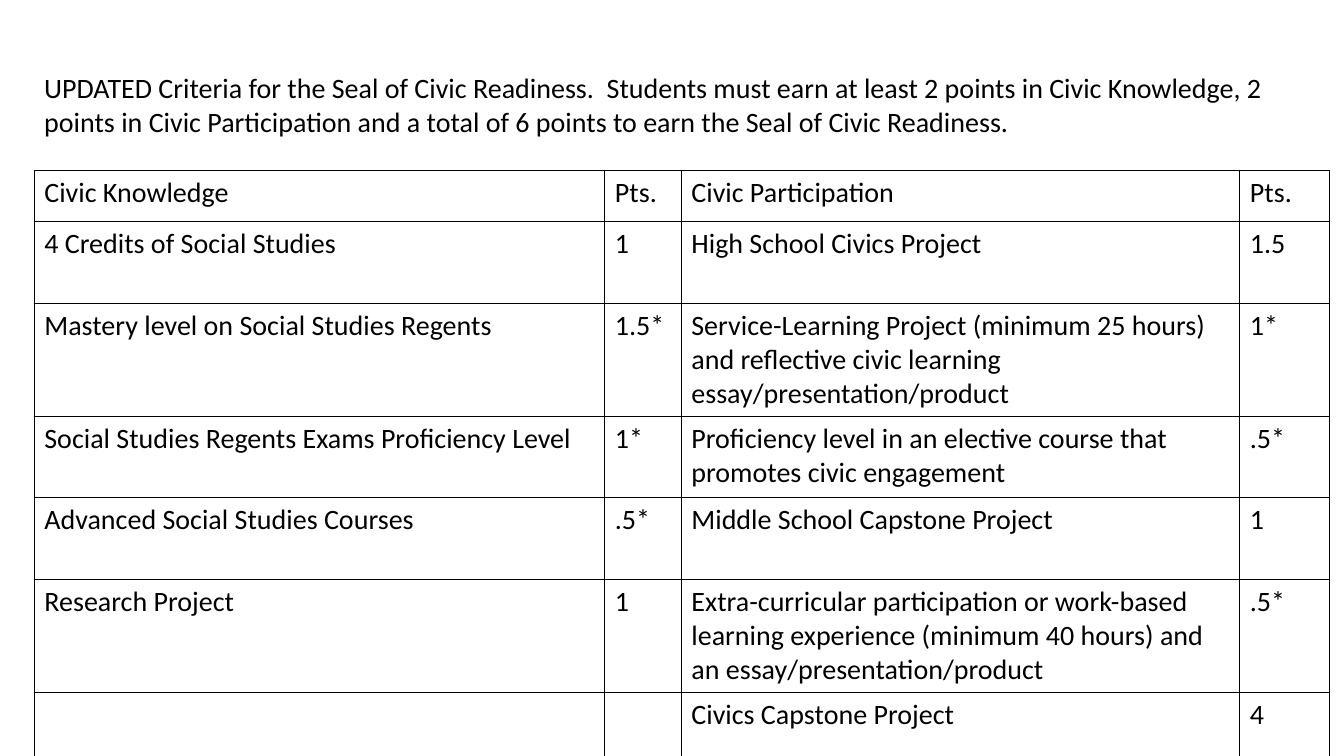
import pptx
import pptx.util
import pptx.dml.color
import pptx.enum.text
import pptx.oxml
import pptx.oxml.ns

Pt = pptx.util.Pt
INK = "000000"
FONT = {"name": "Calibri", "size": Pt(20), "bold": False}
INSETS = {"margin_left": Pt(7.2), "margin_right": Pt(7.2),
          "margin_top": Pt(3.6), "margin_bottom": Pt(3.6)}
CRITERIA = (
    "UPDATED Criteria for the Seal of Civic Readiness.  Students must earn at least "
    "2 points in Civic Knowledge, 2 points in Civic Participation and a total of "
    "6 points to earn the Seal of Civic Readiness."
)
COLUMNS = (407.5, 54.7, 398.9, 64.1)
HEIGHTS = (36.7, 58.3, 58.3, 58.3, 58.3, 79.2, 58.3)
ROWS = (
    ("Civic Knowledge", "Pts.", "Civic Participation", "Pts."),
    ("4 Credits of Social Studies", "1", "High School Civics Project", "1.5"),
    ("Mastery level on Social Studies Regents", "1.5*",
     "Service-Learning Project (minimum 25 hours) and reflective civic learning "
     "essay/presentation/product", "1*"),
    ("Social Studies Regents Exams Proficiency Level", "1*",
     "Proficiency level in an elective course that promotes civic engagement", ".5*"),
    ("Advanced Social Studies Courses", ".5*", "Middle School Capstone Project", "1"),
    ("Research Project", "1",
     "Extra-curricular participation or work-based learning experience "
     "(minimum 40 hours) and an essay/presentation/product", ".5*"),
    ("", "", "Civics Capstone Project", "4"),
)


def color(code):
    return pptx.dml.color.RGBColor.from_string(code)


def apply(target, values):
    for name, value in values.items():
        setattr(target, name, value)


def write(frame, text):
    para = frame.paragraphs[0]
    para.text = text
    apply(para.font, FONT)
    para.font.color.rgb = color(INK)


def border(cell):
    """Draw a thin line on all four sides of a cell."""
    props = cell._tc.get_or_add_tcPr()
    for place, side in enumerate(("lnL", "lnR", "lnT", "lnB")):
        props.insert(place, pptx.oxml.parse_xml(
            f'<a:{side} {pptx.oxml.ns.nsdecls("a")} w="12700"><a:solidFill>'
            f'<a:srgbClr val="{INK}"/></a:solidFill></a:{side}>'))


def intro(slide, left, top, width, height):
    frame = slide.shapes.add_textbox(Pt(left), Pt(top), Pt(width), Pt(height)).text_frame
    apply(frame, {**INSETS, "word_wrap": True,
                  "auto_size": pptx.enum.text.MSO_AUTO_SIZE.SHAPE_TO_FIT_TEXT})
    write(frame, CRITERIA)


def points(slide, left, top, width, height):
    """Place the table of criteria and their points."""
    table = slide.shapes.add_table(
        len(ROWS), len(COLUMNS), Pt(left), Pt(top), Pt(width), Pt(height)).table
    apply(table, {"first_row": False, "horz_banding": False})
    for column, size in zip(table.columns, COLUMNS):
        column.width = Pt(size)
    for row, size, texts in zip(table.rows, HEIGHTS, ROWS):
        row.height = Pt(size)
        for cell, text in zip(row.cells, texts):
            apply(cell, INSETS)
            cell.fill.background()
            border(cell)
            write(cell.text_frame, text)


def main():
    deck = pptx.Presentation()
    apply(deck, {"slide_width": Pt(960), "slide_height": Pt(540)})
    slide = deck.slides.add_slide(deck.slide_layouts[6])
    left, width = 24.5, sum(COLUMNS)
    points(slide, left, 121.7, width, sum(HEIGHTS))
    intro(slide, left, 46.8, width, 55.4)
    deck.save("out.pptx")


if __name__ == "__main__":
    main()
